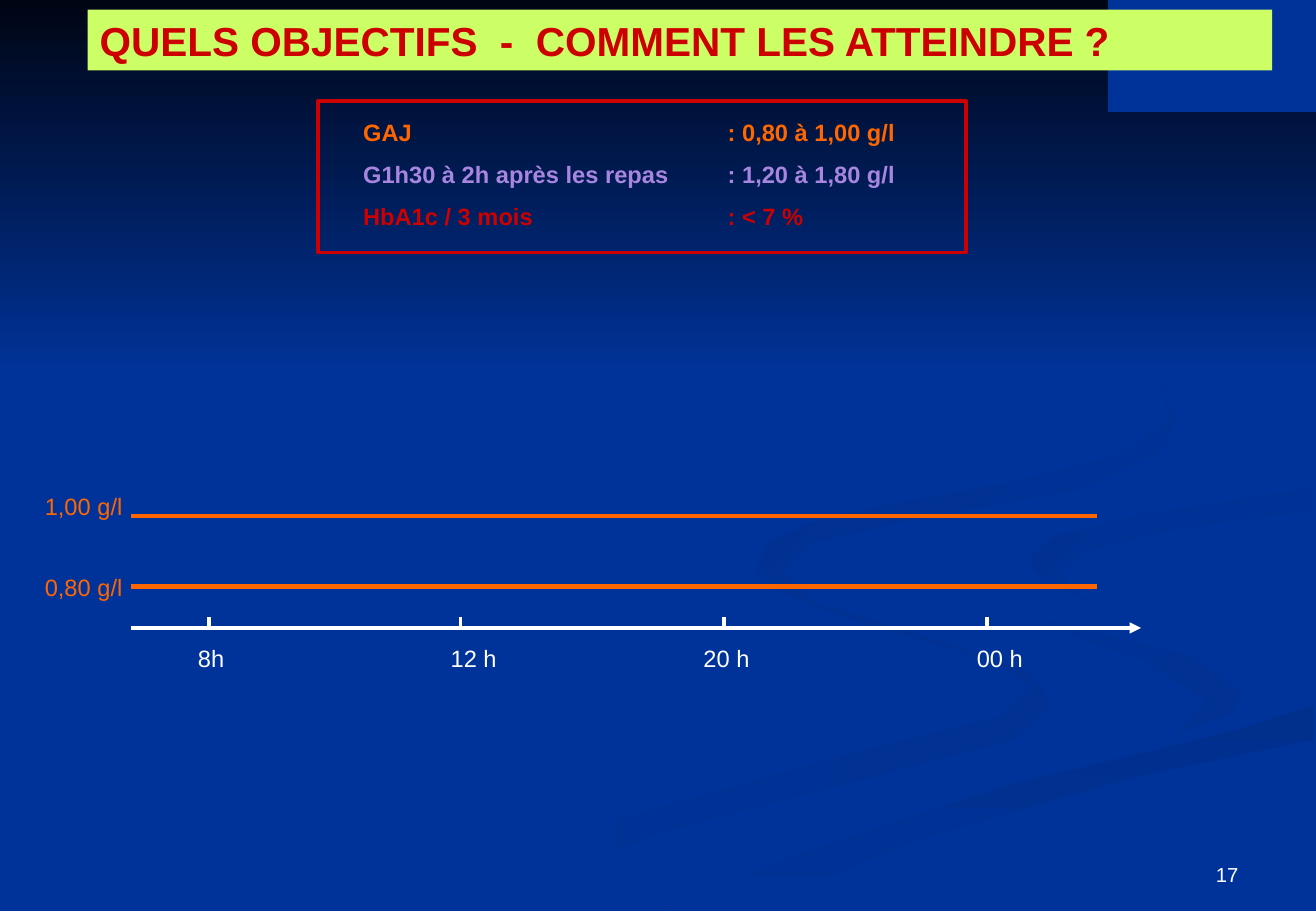
"""Build the slide on glucose targets with its daily time axis."""
from lxml.etree import SubElement
from pptx import Presentation
from pptx.dml.color import RGBColor
from pptx.enum.shapes import MSO_CONNECTOR as CONNECTOR, MSO_SHAPE as SHAPE
from pptx.enum.text import MSO_ANCHOR as ANCHOR, PP_ALIGN as ALIGN
from pptx.oxml.ns import qn
from pptx.util import Pt

PX = 9144
COLORS = {
    "blue": "003399", "night": "000514", "lime": "CCFF66", "red": "CC0000",
    "orange": "FF6600", "violet": "A886E0", "white": "FFFFFF",
    "shade1": "003193", "shade2": "002F8C", "shade3": "003091", "shade4": "002F8E",
}
RGB = {name: RGBColor.from_string(value) for name, value in COLORS.items()}

presentation = Presentation()
presentation.slide_width, presentation.slide_height = 1083 * PX, 750 * PX
slide = presentation.slides.add_slide(presentation.slide_layouts[5])
slide.background.fill.solid()
slide.background.fill.fore_color.rgb = RGB["blue"]
shapes = slide.shapes


def write(shape, lines, size=14, bold=False, align=ALIGN.LEFT, anchor=ANCHOR.TOP):
    """Fill a shape with (text, colour) lines."""
    frame = shape.text_frame
    frame.word_wrap, frame.vertical_anchor = True, anchor
    for index, (text, color) in enumerate(lines):
        paragraph = frame.add_paragraph() if index else frame.paragraphs[0]
        paragraph.text, paragraph.alignment = text, align
        paragraph.space_before = Pt(8 if index else 0)
        for name, value in {"name": "Arial", "size": Pt(size), "bold": bold}.items():
            setattr(paragraph.font, name, value)
        paragraph.font.color.rgb = RGB[color]


def add_line(x1, y1, x2, y2, color, width=2.25):
    """Draw a straight line without shadow."""
    line = shapes.add_connector(CONNECTOR.STRAIGHT, x1 * PX, y1 * PX, x2 * PX, y2 * PX)
    line.line.color.rgb, line.line.width = RGB[color], Pt(width)
    SubElement(line._element.spPr, qn("a:effectLst"))
    return line


RIBBONS = [
    ("blue", "shade1", 0, [
        (847, 553), (774, 528), (653, 490), (623, 459), (620, 476), (683, 505),
        (815, 543), (851, 566), (822, 590), (668, 629), (452, 690), (325, 749),
        (391, 749), (540, 687), (833, 609), (867, 581)]),
    ("blue", "shade1", 45, [
        (1021, 570), (980, 540), (838, 503), (784, 464), (801, 494), (940, 544),
        (993, 576), (968, 605), (1015, 586)]),
    ("shade2", "blue", 90, [
        (545, 749), (619, 749), (753, 692), (932, 640), (1081, 609), (1081, 581),
        (1014, 602), (828, 647), (649, 706)]),
    ("shade3", "blue", 45, [
        (847, 460), (857, 478), (895, 496), (872, 472), (897, 453), (971, 435),
        (1081, 420), (1081, 402), (937, 424), (866, 442)]),
    ("shade4", "blue", 45, [
        (740, 430), (893, 402), (957, 370), (968, 344), (945, 299), (889, 261),
        (826, 233), (916, 279), (959, 320), (960, 348), (923, 374), (827, 398),
        (678, 426), (633, 446), (625, 462), (639, 484), (674, 500), (643, 470),
        (665, 448)]),
    ("night", "blue", 90, [(0, 0), (0, 308), (1083, 308), (1083, 0)]),
    ("blue", "blue", 0, [(912, 0), (912, 92), (1083, 92), (1083, 0)]),
]
for start, end, angle, points in RIBBONS:
    builder = shapes.build_freeform(*points[0], scale=PX)
    builder.add_line_segments(points[1:])
    ribbon = builder.convert_to_shape()
    ribbon.shadow.inherit = False
    ribbon.line.fill.background()
    ribbon.fill.gradient()
    ribbon.fill.gradient_angle = (360 - angle) % 360
    for stop, color in zip(ribbon.fill.gradient_stops, (start, end)):
        stop.color.rgb = RGB[color]

title = shapes.title
ribbon._element.addnext(title._element)
title.left, title.top, title.width, title.height = 72 * PX, 8 * PX, 975 * PX, 50 * PX
title.fill.solid()
title.fill.fore_color.rgb = RGB["lime"]
write(title, [("QUELS OBJECTIFS  -  COMMENT LES ATTEINDRE ?", "red")], 24, True,
      anchor=ANCHOR.MIDDLE)

for label, label_top, level, width in [("1,00 g/l", 400, 425, 2.25), ("0,80 g/l", 467, 483, 3)]:
    add_line(108, level, 903, level, "orange", width)
    box = shapes.add_textbox(27 * PX, label_top * PX, 99 * PX, 33 * PX)
    write(box, [(label, "orange")])

axis = add_line(108, 517, 939, 517, "white")
SubElement(axis.line._get_or_add_ln(), qn("a:tailEnd"), type="triangle")
for hour, tick, label_left in [("8h", 172, 153), ("12 h", 379, 361),
                               ("20 h", 596, 569), ("00 h", 812, 794)]:
    add_line(tick, 508, tick, 517, "white")
    box = shapes.add_textbox(label_left * PX, 525 * PX, 99 * PX, 33 * PX)
    write(box, [(hour, "white")])

targets = shapes.add_textbox(289 * PX, 92 * PX, 506 * PX, 116 * PX)
write(targets, [("GAJ\t: 0,80 à 1,00 g/l", "orange"),
                ("G1h30 à 2h après les repas\t: 1,20 à 1,80 g/l", "violet"),
                ("HbA1c / 3 mois\t: < 7 %", "red")], bold=True)
for paragraph in targets.text_frame.paragraphs:
    spacing = paragraph._p.get_or_add_pPr().find(qn("a:spcBef"))
    tab_list = SubElement(spacing.getparent(), qn("a:tabLst"))
    SubElement(tab_list, qn("a:tab"), pos=str(300 * PX), algn="l")
    spacing.addnext(tab_list)

border = shapes.add_shape(SHAPE.RECTANGLE, 262 * PX, 83 * PX, 533 * PX, 125 * PX)
border.shadow.inherit = False
border.fill.background()
border.line.color.rgb, border.line.width = RGB["red"], Pt(2.25)

page_number = shapes.add_textbox(776 * PX, 683 * PX, 253 * PX, 52 * PX)
write(page_number, [("17", "white")], 12, align=ALIGN.RIGHT, anchor=ANCHOR.BOTTOM)

presentation.save("out.pptx")
